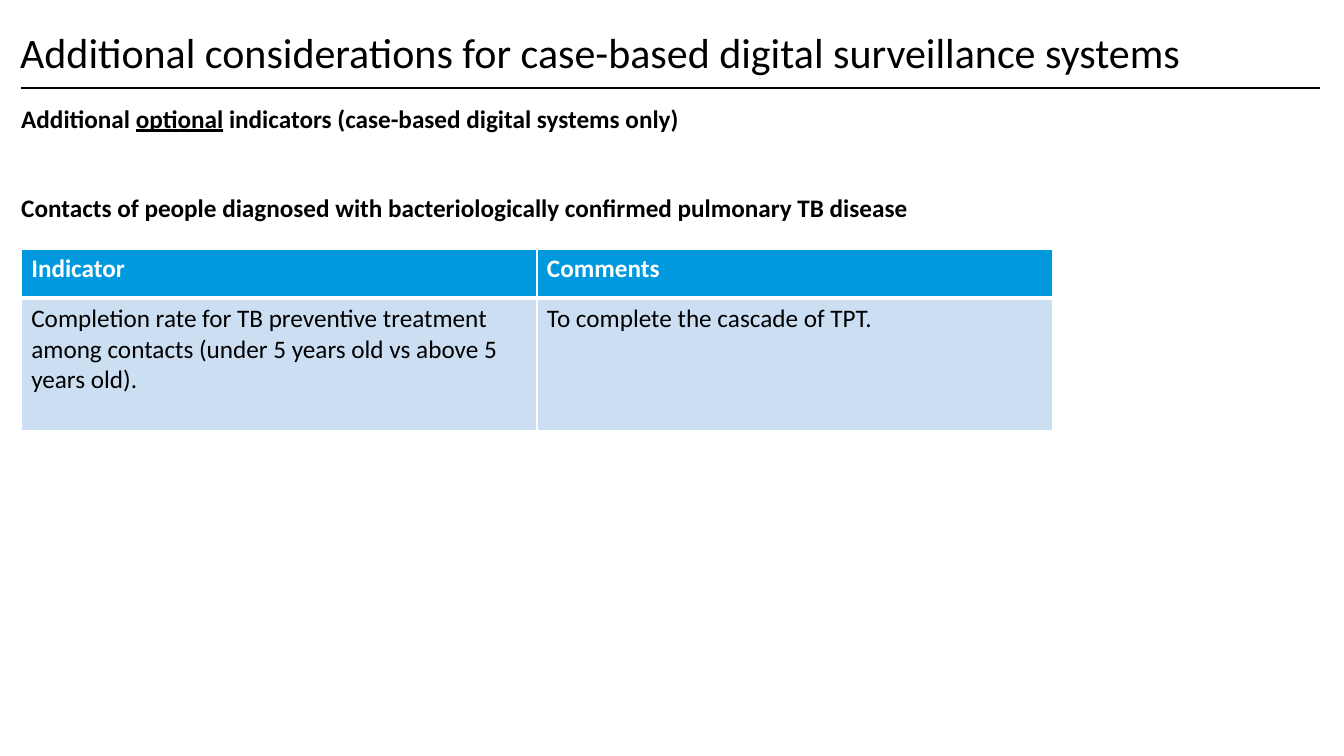
import pptx
import pptx.dml.color
import pptx.enum.shapes
import pptx.enum.text
import pptx.oxml
import pptx.oxml.ns
import pptx.util

BLACK, WHITE, HEADER_BLUE, PALE_BLUE = "000000", "FFFFFF", "0099DD", "CCDEF2"
LEFT, RULE_WIDTH = 1.58, 96.62


def colour(hex_string):
    return pptx.dml.color.RGBColor.from_string(hex_string)


def element(tag, content="", **attributes):
    pairs = "".join(f' {name}="{value}"' for name, value in attributes.items())
    return pptx.oxml.parse_xml(
        f'<a:{tag} {pptx.oxml.ns.nsdecls("a")}{pairs}>{content}</a:{tag}>')


class Page:
    """One slide and its style; positions are percentages of the slide's size."""

    def __init__(self, deck, font="Calibri", size=18):
        self.deck, self.font, self.size = deck, font, size
        self.slide = deck.slides.add_slide(deck.slide_layouts[1])

    def across(self, percent):
        return round(self.deck.slide_width * percent / 100)

    def down(self, percent):
        return round(self.deck.slide_height * percent / 100)

    def place(self, left, top, width, height):
        return (self.across(left), self.down(top),
                self.across(width), self.down(height))

    def add_span(self, para, text, size=None, ink=BLACK, bold=False, underline=False):
        span = para.add_run()
        span.text = text
        font = span.font
        font.name, font.size = self.font, pptx.util.Pt(size or self.size)
        font.bold, font.underline = bold, underline
        font.color.rgb = colour(ink)

    def move(self, box, *area):
        box.left, box.top, box.width, box.height = self.place(*area)
        frame = box.text_frame
        frame.word_wrap = True
        frame.auto_size = pptx.enum.text.MSO_AUTO_SIZE.NONE
        return frame

    def title(self, text, *area):
        frame = self.move(self.slide.shapes.title, *area)
        frame.vertical_anchor = pptx.enum.text.MSO_ANCHOR.MIDDLE
        para = frame.paragraphs[0]
        para.alignment = pptx.enum.text.PP_ALIGN.LEFT
        para.line_spacing = 0.9
        self.add_span(para, text, size=30)

    def body(self, lines, gap, *area):
        frame = self.move(self.slide.placeholders[1], *area)
        frame.margin_left = frame.margin_right = 0
        frame.margin_top = frame.margin_bottom = 0
        for index, spans in enumerate(lines):
            para = frame.add_paragraph() if index else frame.paragraphs[0]
            properties = para._p.get_or_add_pPr()
            properties.set("marL", "0")
            properties.set("indent", "0")
            properties.append(element("buNone"))
            para.space_before = pptx.util.Pt(gap if index else 0)
            for text, underline in spans:
                self.add_span(para, text, bold=True, underline=underline)

    def rule(self, left, top, width):
        start, height, length, _ = self.place(left, top, width, 0)
        line = self.slide.shapes.add_connector(
            pptx.enum.shapes.MSO_CONNECTOR.STRAIGHT,
            start, height, start + length, height)
        line.line.color.rgb = colour(BLACK)
        line.line.width = pptx.util.Pt(1.5)
        line._element.spPr.append(element("effectLst"))

    def table(self, rows, heights, *area):
        grid = self.slide.shapes.add_table(
            len(rows), len(rows[0]), *self.place(*area)).table
        for row, height in zip(grid.rows, heights):
            row.height = self.down(height)
        for row_index, row in enumerate(rows):
            header = row_index == 0
            for column, text in enumerate(row):
                cell = grid.cell(row_index, column)
                self.borders(cell, top=1 if header else 3, bottom=3 if header else 1)
                cell.fill.solid()
                cell.fill.fore_color.rgb = colour(HEADER_BLUE if header else PALE_BLUE)
                self.add_span(cell.text_frame.paragraphs[0], text,
                              ink=WHITE if header else BLACK, bold=header)

    def borders(self, cell, top, bottom):
        white = f'<a:solidFill><a:srgbClr val="{WHITE}"/></a:solidFill>'
        for side, width in (("L", 1), ("R", 1), ("T", top), ("B", bottom)):
            cell._tc.get_or_add_tcPr().append(
                element("ln" + side, white, w=int(pptx.util.Pt(width))))


def main():
    deck = pptx.Presentation()
    deck.slide_width = pptx.util.Inches(13.33)
    deck.slide_height = pptx.util.Inches(7.5)
    page = Page(deck)
    page.rule(LEFT, 11.6, RULE_WIDTH)
    page.body([
        [("Additional ", False), ("optional", True),
         (" indicators (case-based digital systems only)", False)],
        [("Contacts of people diagnosed with bacteriologically confirmed "
          "pulmonary TB disease", False)],
    ], 42, LEFT, 13.6, RULE_WIDTH, 79.73)
    page.title("Additional considerations for case-based digital surveillance systems",
               0.75, 1.6, 98.27, 11.33)
    page.table([
        ["Indicator", "Comments"],
        ["Completion rate for TB preventive treatment among contacts "
         "(under 5 years old vs above 5 years old).",
         "To complete the cascade of TPT."],
    ], [6.53, 17.47], LEFT, 32.93, 76.74, 24)
    deck.save("out.pptx")


if __name__ == "__main__":
    main()
